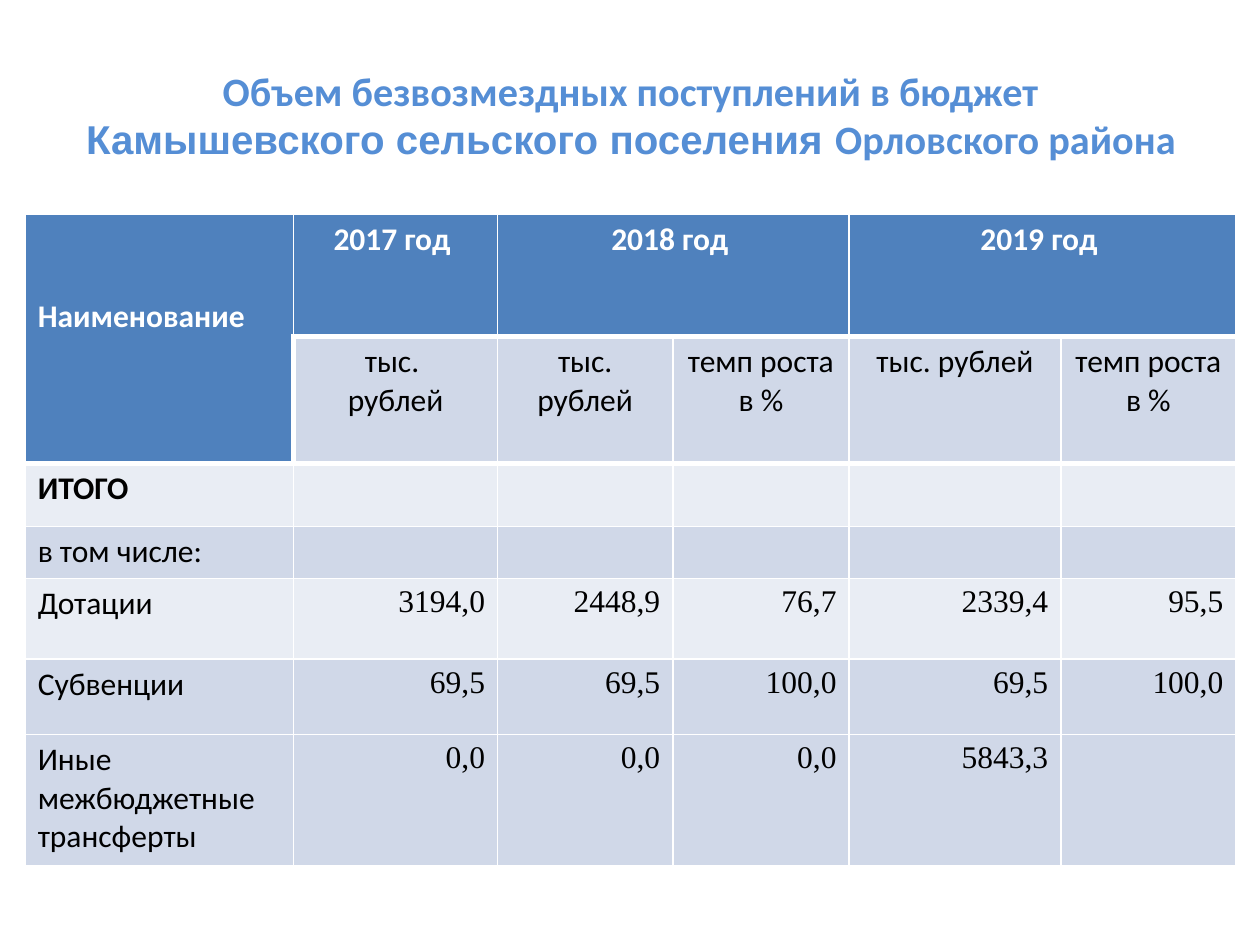
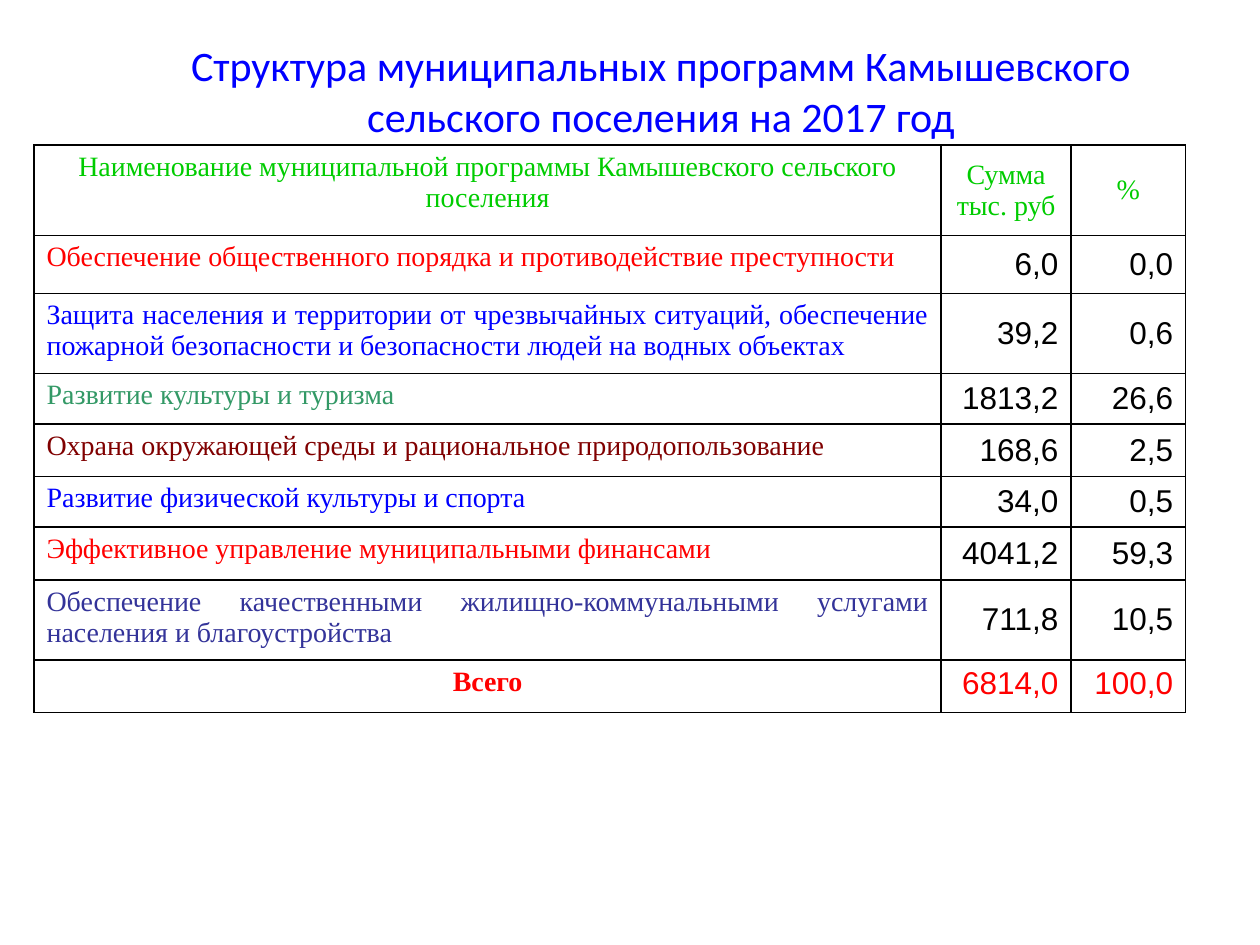
from pptx import Presentation
from pptx.util import Inches, Pt
from pptx.dml.color import RGBColor
from pptx.enum.text import PP_ALIGN as Al, MSO_ANCHOR as Anc
from pptx.oxml import parse_xml
from pptx.oxml.ns import nsdecls

SANS, ARIAL, SERIF = "Calibri", "Arial", "Times New Roman"
WHITE, BLACK, RED, BLUE = "FFFFFF", "000000", "FF0000", "0000FF"
GREEN, SKY = "00CC00", "558ED5"
HEAD, DARK, PALE = "4F81BD", "D0D8E8", "E9EDF4"

GRANTS = [
    ("ИТОГО", PALE, []),
    ("в том числе:", DARK, []),
    ("Дотации", PALE, ["3194,0", "2448,9", "76,7", "2339,4", "95,5"]),
    ("Субвенции", DARK, ["69,5", "69,5", "100,0", "69,5", "100,0"]),
    ("Иные межбюджетные трансферты", DARK, ["0,0", "0,0", "0,0", "5843,3"]),
]

PLANS = [
    ("Обеспечение общественного порядка и противодействие преступности",
     RED, "6,0", "0,0"),
    ("Защита населения и территории от чрезвычайных ситуаций, обеспечение "
     "пожарной безопасности и безопасности людей на водных объектах",
     BLUE, "39,2", "0,6"),
    ("Развитие культуры и туризма", "339966", "1813,2", "26,6"),
    ("Охрана окружающей среды и рациональное природопользование",
     "800000", "168,6", "2,5"),
    ("Развитие физической культуры и спорта", BLUE, "34,0", "0,5"),
    ("Эффективное управление муниципальными финансами",
     RED, "4041,2", "59,3"),
    ("Обеспечение качественными жилищно-коммунальными услугами населения "
     "и благоустройства", "333399", "711,8", "10,5"),
]


def tint(hue):
    return RGBColor.from_string(hue)


def add_run(par, text, size, font, hue, bold=False):
    run = par.add_run()
    run.text = text
    run.font.size = Pt(size)
    run.font.name = font
    run.font.bold = bold
    run.font.color.rgb = tint(hue)


def add_title(slide, box, runs, size, hue, bold=False):
    frame = slide.shapes.add_textbox(*map(Inches, box)).text_frame
    frame.word_wrap = True
    frame.vertical_anchor = Anc.MIDDLE
    par = frame.paragraphs[0]
    par.alignment = Al.CENTER
    for text, font in runs:
        add_run(par, text, size, font, hue, bold)


def add_grid(slide, left, top, cols, rows):
    frame = slide.shapes.add_table(
        len(rows), len(cols), Inches(left), Inches(top),
        Inches(sum(cols)), Inches(sum(rows)))
    grid = frame.table
    grid.first_row = grid.horz_banding = False
    for col, width in zip(grid.columns, cols):
        col.width = Inches(width)
    for row, height in zip(grid.rows, rows):
        row.height = Inches(height)
    return grid


def style(cell, hue, edge, **wide):
    if hue:
        cell.fill.solid()
        cell.fill.fore_color.rgb = tint(hue)
    else:
        cell.fill.background()
    props = cell._tc.get_or_add_tcPr()
    for spot, side in enumerate("LRTB"):
        width = Pt(wide.get(side, 1))
        props.insert(spot, parse_xml(
            f'<a:ln{side} {nsdecls("a")} w="{width}"><a:solidFill>'
            f'<a:srgbClr val="{edge}"/></a:solidFill></a:ln{side}>'))


def fill_in(cell, text, size, font, hue, align=Al.LEFT, bold=False,
            anchor=Anc.TOP):
    cell.vertical_anchor = anchor
    frame = cell.text_frame
    for num, line in enumerate(text.split("\n")):
        par = frame.add_paragraph() if num else frame.paragraphs[0]
        par.alignment = align
        add_run(par, line, size, font, hue, bold)


def grant_slide(slide):
    add_title(slide, (0.51, 0.36, 9, 1.1), [
        ("Объем безвозмездных поступлений в бюджет ", SANS),
        ("Камышевского сельского поселения ", ARIAL),
        ("Орловского района", SANS)], 23, SKY, True)
    grid = add_grid(slide, 0.2, 1.7, [2.13, 1.62, 1.39, 1.4, 1.68, 1.39],
                    [0.97, 0.97, 0.5, 0.41, 0.64, 0.6, 1.04])
    for col in range(6):
        style(grid.cell(0, col), HEAD, WHITE, B=3)
        if col:
            style(grid.cell(1, col), DARK, WHITE, T=3, L=3 if col == 1 else 1)
        else:
            style(grid.cell(1, col), HEAD, WHITE, B=3)
    grid.cell(0, 0).merge(grid.cell(1, 0))
    for col in (2, 4):
        grid.cell(0, col).merge(grid.cell(0, col + 1))

    name = grid.cell(0, 0)
    name.margin_top = Inches(0.66)
    fill_in(name, "Наименование", 18, SANS, WHITE, bold=True)
    for col, year in ((1, 2017), (2, 2018), (4, 2019)):
        fill_in(grid.cell(0, col), f"{year} год ", 18, SANS, WHITE,
                Al.CENTER, True)
    units = ["тыс. \nрублей"] + ["тыс. рублей", "темп роста в %"] * 2
    for col, unit in enumerate(units, 1):
        fill_in(grid.cell(1, col), unit, 18, SANS, BLACK, Al.CENTER)

    for row, (label, hue, sums) in enumerate(GRANTS, 2):
        for col in range(6):
            style(grid.cell(row, col), hue, WHITE, T=3 if row == 2 else 1)
        fill_in(grid.cell(row, 0), label, 18, SANS, BLACK, bold=row == 2)
        for col, num in enumerate(sums, 1):
            fill_in(grid.cell(row, col), num, 18, SERIF, BLACK, Al.RIGHT)


def plan_slide(slide):
    add_title(slide, (1, 0.28, 8.49, 0.87), [
        ("Структура муниципальных программ Камышевского сельского "
         "поселения на 2017 год", SANS)], 24, BLUE)
    grid = add_grid(slide, 0.27, 1.15, [7.2, 1.03, 0.91],
                    [0.72, 0.46, 0.6, 0.38, 0.42, 0.38, 0.42, 0.6, 0.42])
    for cell in grid.iter_cells():
        style(cell, None, BLACK)
    heads = ["Наименование муниципальной программы Камышевского сельского "
             "поселения", "Сумма тыс. руб", "%"]
    for col, head in enumerate(heads):
        fill_in(grid.cell(0, col), head, 16, SERIF, GREEN, Al.CENTER,
                anchor=Anc.MIDDLE if col else Anc.TOP)
    for row, (plan, hue, *sums) in enumerate(PLANS, 1):
        fill_in(grid.cell(row, 0), plan, 16, SERIF, hue, Al.JUSTIFY)
        for col, num in enumerate(sums, 1):
            fill_in(grid.cell(row, col), num, 18, ARIAL, BLACK, Al.RIGHT,
                    anchor=Anc.MIDDLE)
    last = len(PLANS) + 1
    fill_in(grid.cell(last, 0), "Всего", 16, SERIF, RED, Al.CENTER, True)
    for col, num in enumerate(["6814,0", "100,0"], 1):
        fill_in(grid.cell(last, col), num, 18, ARIAL, RED, Al.RIGHT)


def main():
    deck = Presentation()
    deck.slide_width, deck.slide_height = Inches(10), Inches(7.5)
    for build in (grant_slide, plan_slide):
        build(deck.slides.add_slide(deck.slide_layouts[6]))
    deck.save("out.pptx")


if __name__ == "__main__":
    main()
